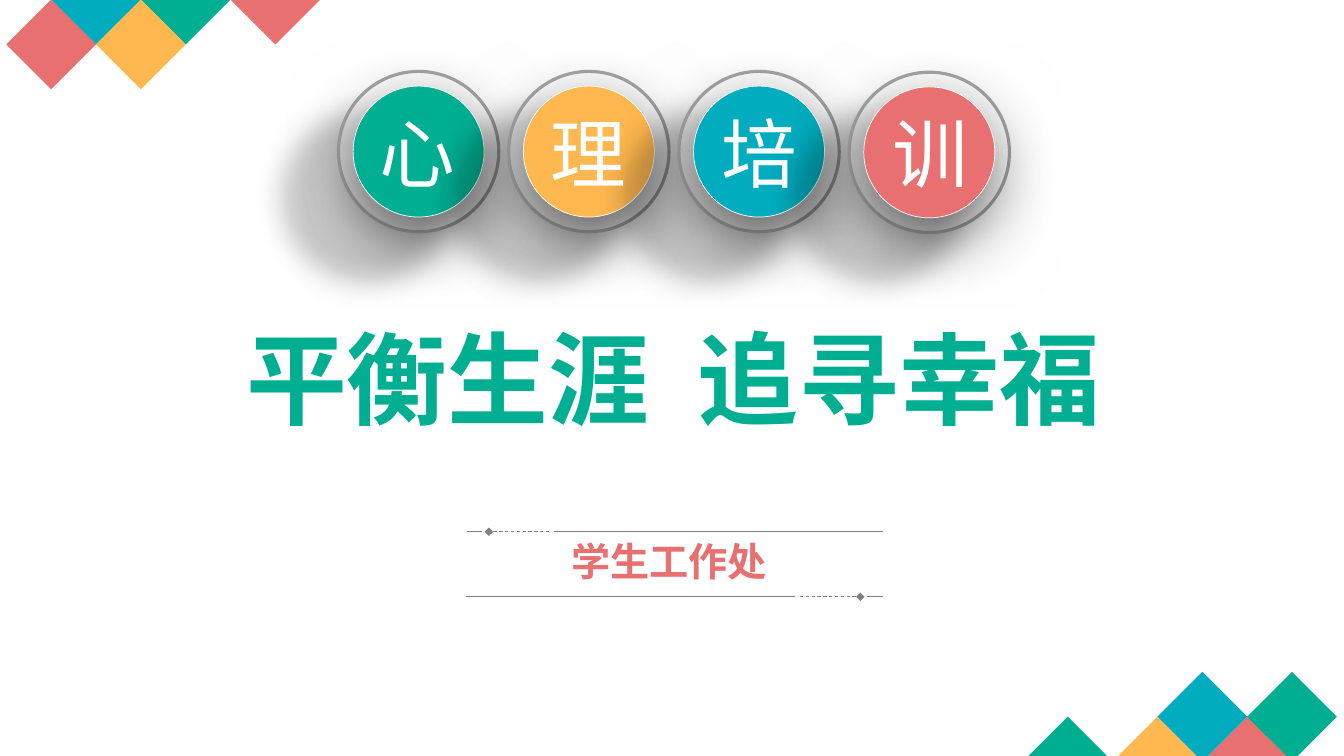
from lxml.etree import SubElement
from pptx import Presentation
from pptx.dml.color import RGBColor
from pptx.enum.dml import MSO_LINE
from pptx.enum.shapes import MSO_CONNECTOR, MSO_SHAPE
from pptx.enum.text import MSO_ANCHOR, MSO_AUTO_SIZE, PP_ALIGN
from pptx.oxml.ns import qn
from pptx.util import Cm, Pt

COLOURS = {
    "green": "00AF92", "yellow": "FFB850", "blue": "01ACBE", "red": "E87071",
    "white": "FFFFFF", "silver": "A6A6A6", "grey": "808080", "black": "000000",
}
FONT = "Noto Sans CJK SC"

presentation = Presentation()
presentation.slide_width, presentation.slide_height = Cm(33.87), Cm(19.05)
slide = presentation.slides.add_slide(presentation.slide_layouts[0])


def write_text(shape, text, box, size, colour, bold=False, wrap=True, gap=0):
    """Fill a text shape at box (left, top, width, height in cm); gap widens the space, in pt."""
    shape.left, shape.top, shape.width, shape.height = [Cm(length) for length in box]
    frame = shape.text_frame
    frame.word_wrap = wrap
    frame.auto_size = MSO_AUTO_SIZE.NONE
    frame.vertical_anchor = MSO_ANCHOR.TOP
    paragraph = frame.paragraphs[0]
    paragraph.alignment = PP_ALIGN.CENTER
    paragraph.space_before = Pt(0)
    paragraph.line_spacing = 1.0
    for piece in filter(None, text.partition(" ")):
        run = paragraph.add_run()
        run.text = piece
        run.font.name = FONT
        run.font.size = Pt(size)
        run.font.bold = bold
        run.font.color.rgb = RGBColor.from_string(COLOURS[colour])
        SubElement(run.font._element, qn("a:ea"), typeface=FONT)
        if piece == " ":
            run.font._element.set("spc", str(gap * 100))


def add_tile(kind, centre_x, centre_y, size, colour, rotation=0, opacity=None,
             outline=None, shadow=None):
    """Add a filled shape; outline is (colour, pt), shadow (opacity, blur, distance, angle)."""
    shape = slide.shapes.add_shape(kind, Cm(centre_x - size / 2), Cm(centre_y - size / 2),
                                   Cm(size), Cm(size))
    shape.rotation = rotation
    shape.shadow.inherit = False
    shape.fill.solid()
    shape.fill.fore_color.rgb = RGBColor.from_string(COLOURS[colour])
    properties = shape._element.spPr
    if opacity:
        fill_colour = properties.find(qn("a:solidFill")).find(qn("a:srgbClr"))
        SubElement(fill_colour, qn("a:alpha"), val=str(opacity * 1000))
    if outline:
        shape.line.color.rgb = RGBColor.from_string(COLOURS[outline[0]])
        shape.line.width = Pt(outline[1])
    else:
        shape.line.fill.background()
    if shadow:
        strength, blur, distance, angle = shadow
        outer = SubElement(properties.find(qn("a:effectLst")), qn("a:outerShdw"),
                           blurRad=str(Pt(blur)), dist=str(Pt(distance)),
                           dir=str(angle * 60000), algn="ctr", rotWithShape="0")
        shadow_colour = SubElement(outer, qn("a:srgbClr"), val=COLOURS["black"])
        SubElement(shadow_colour, qn("a:alpha"), val=str(strength * 1000))


# Corner mosaics: (column, row, colour) on a half-diamond grid
half_diagonal = 1.13
mosaics = [
    (1.29, -0.01, [(5, 0, "red"), (3, 0, "green"), (1, 0, "blue"),
                   (2, 1, "yellow"), (0, 1, "red")]),
    (26.91, 18.06, [(0, 1, "green"), (2, 1, "yellow"), (4, 1, "red"),
                    (3, 0, "blue"), (5, 0, "green")]),
]
for left, top, tiles in mosaics:
    for column, row, colour in tiles:
        add_tile(MSO_SHAPE.RECTANGLE, left + column * half_diagonal,
                 top + row * half_diagonal, 1.6, colour, rotation=45)

# Title and department
write_text(slide.shapes.title, "平衡生涯 追寻幸福", (4.78, 7.85, 24.38, 3.33), 72, "green",
           bold=True, gap=18)
write_text(slide.placeholders[1], "学生工作处", (14.0, 13.41, 5.72, 1.45), 28, "red", bold=True)

# Rules around the department: the lower one is the upper one turned half a circle
rule_pieces = [(22.25, 13.97, False), (13.84, 12.32, True), (12.14, 11.76, False)]
mirror_sum = 34.0
for y, turned in [(13.4, False), (15.04, True)]:
    for start, end, dashed in rule_pieces:
        if turned:
            start, end = mirror_sum - start, mirror_sum - end
        connector = slide.shapes.add_connector(MSO_CONNECTOR.STRAIGHT, Cm(start), Cm(y), Cm(end), Cm(y))
        connector.line.color.rgb = RGBColor.from_string(COLOURS["grey"])
        connector.line.width = Pt(0.6)
        if dashed:
            connector.line.dash_style = MSO_LINE.DASH
            SubElement(connector.line._get_or_add_ln(), qn("a:tailEnd"), type="diamond")
        SubElement(connector._element.spPr, qn("a:effectLst"))

# Buttons: translucent ring with a coloured cap
buttons = [("心", "green", 3.82), ("理", "yellow", 3.82), ("培", "blue", 3.82), ("训", "red", 3.84)]
for index, (character, colour, centre_y) in enumerate(buttons):
    centre_x = 10.55 + index * 4.29
    add_tile(MSO_SHAPE.OVAL, centre_x, centre_y, 4.04, "white", opacity=34,
             outline=("silver", 2.25), shadow=(62, 21, 49, 139))
    add_tile(MSO_SHAPE.OVAL, centre_x, centre_y, 3.3, colour,
             outline=("white", 0.5), shadow=(60, 49, 16, 90))

# Button characters
for index, (character, colour, centre_y) in enumerate(buttons):
    label = slide.shapes.add_textbox(0, 0, 0, 0)
    write_text(label, character, (9.31 + index * 4.31, 2.57, 2.42, 2.57), 54, "white", wrap=False)

presentation.save("out.pptx")
